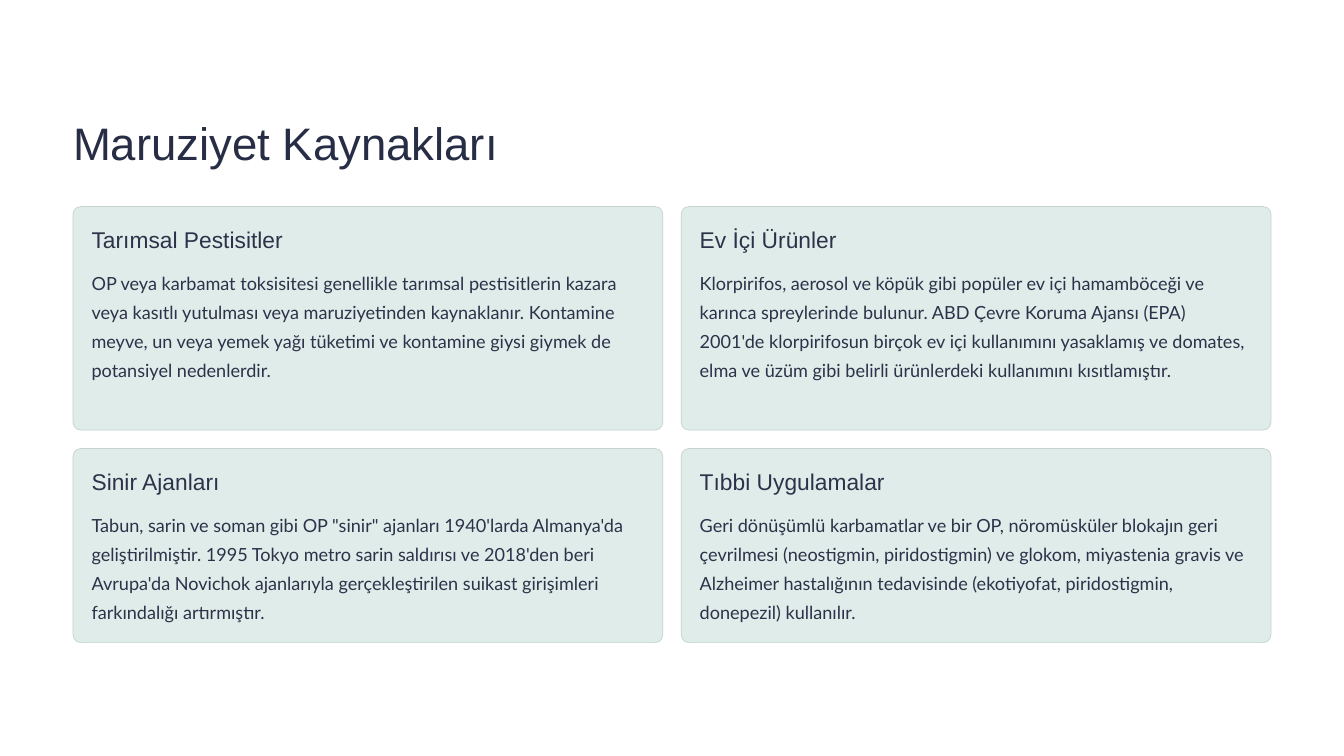
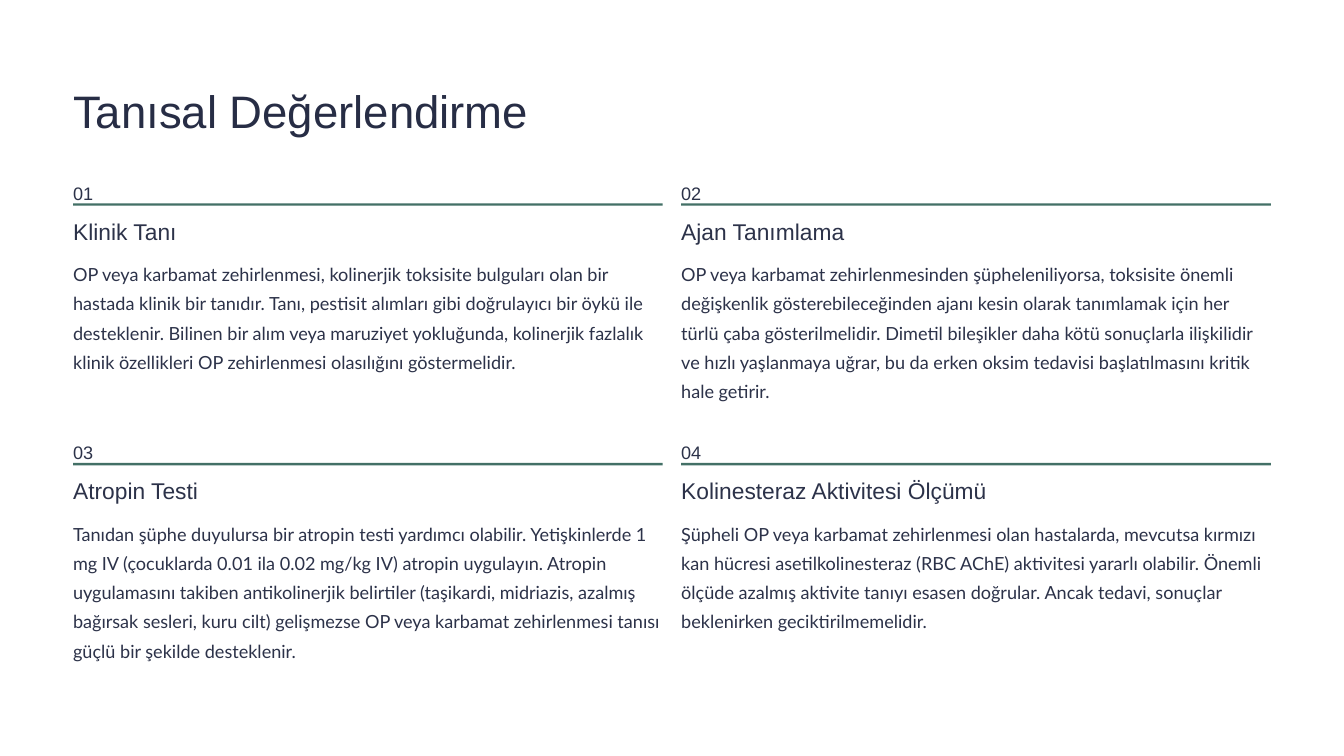
from dataclasses import dataclass

import pptx
import pptx.dml.color
import pptx.enum.shapes
import pptx.enum.text
import pptx.slide
import pptx.util
from pptx.dml.color import RGBColor
from pptx.util import Inches

TITLE_INK = RGBColor(0x27, 0x2D, 0x45)
INK = RGBColor(0x2C, 0x32, 0x49)
CARD_FILL = RGBColor(0xDF, 0xEC, 0xE9)
CARD_EDGE = RGBColor(0xC5, 0xD2, 0xCF)
RULE_GREEN = RGBColor(0x43, 0x70, 0x66)

# Two-column grid, in inches
LEFT = 0.87
COLUMN_WIDTH = 7.02
GAP = 0.22
PADDING = 0.22
CORNER_RADIUS = 0.09
HEADING_TO_BODY = 0.47
BODY_LINE = 0.3475


@dataclass(frozen=True)
class TextStyle:
    font: str
    size: float
    leading: float
    color: RGBColor


TITLE = TextStyle("Arial", 39, 48.5, TITLE_INK)
HEADING = TextStyle("Arial", 19.5, 24, INK)
NUMBER = TextStyle("Arial", 15.5, 25, INK)
BODY = TextStyle("Lato", 15.5, 25, INK)


@dataclass(frozen=True)
class Topic:
    heading: str
    body: str
    body_lines: int = 4
    heading_width: float = 2.71


SOURCES = [
    Topic("Tarımsal Pestisitler",
          "OP veya karbamat toksisitesi genellikle tarımsal pestisitlerin kazara veya "
          "kasıtlı yutulması veya maruziyetinden kaynaklanır. Kontamine meyve, un veya "
          "yemek yağı tüketimi ve kontamine giysi giymek de potansiyel nedenlerdir."),
    Topic("Ev İçi Ürünler",
          "Klorpirifos, aerosol ve köpük gibi popüler ev içi hamamböceği ve karınca "
          "spreylerinde bulunur. ABD Çevre Koruma Ajansı (EPA) 2001'de klorpirifosun "
          "birçok ev içi kullanımını yasaklamış ve domates, elma ve üzüm gibi belirli "
          "ürünlerdeki kullanımını kısıtlamıştır.", body_lines=5),
    Topic("Sinir Ajanları",
          "Tabun, sarin ve soman gibi OP \"sinir\" ajanları 1940'larda Almanya'da "
          "geliştirilmiştir. 1995 Tokyo metro sarin saldırısı ve 2018'den beri Avrupa'da "
          "Novichok ajanlarıyla gerçekleştirilen suikast girişimleri farkındalığı "
          "artırmıştır."),
    Topic("Tıbbi Uygulamalar",
          "Geri dönüşümlü karbamatlar ve bir OP, nöromüsküler blokajın geri çevrilmesi "
          "(neostigmin, piridostigmin) ve glokom, miyastenia gravis ve Alzheimer "
          "hastalığının tedavisinde (ekotiyofat, piridostigmin, donepezil) kullanılır."),
]

STEPS = [
    Topic("Klinik Tanı",
          "OP veya karbamat zehirlenmesi, kolinerjik toksisite bulguları olan bir hastada "
          "klinik bir tanıdır. Tanı, pestisit alımları gibi doğrulayıcı bir öykü ile "
          "desteklenir. Bilinen bir alım veya maruziyet yokluğunda, kolinerjik fazlalık "
          "klinik özellikleri OP zehirlenmesi olasılığını göstermelidir.", body_lines=5),
    Topic("Ajan Tanımlama",
          "OP veya karbamat zehirlenmesinden şüpheleniliyorsa, toksisite önemli "
          "değişkenlik gösterebileceğinden ajanı kesin olarak tanımlamak için her türlü "
          "çaba gösterilmelidir. Dimetil bileşikler daha kötü sonuçlarla ilişkilidir ve "
          "hızlı yaşlanmaya uğrar, bu da erken oksim tedavisi başlatılmasını kritik hale "
          "getirir.", body_lines=5),
    Topic("Atropin Testi",
          "Tanıdan şüphe duyulursa bir atropin testi yardımcı olabilir. Yetişkinlerde 1 "
          "mg IV (çocuklarda 0.01 ila 0.02 mg/kg IV) atropin uygulayın. Atropin "
          "uygulamasını takiben antikolinerjik belirtiler (taşikardi, midriazis, azalmış "
          "bağırsak sesleri, kuru cilt) gelişmezse OP veya karbamat zehirlenmesi tanısı "
          "güçlü bir şekilde desteklenir.", body_lines=5),
    Topic("Kolinesteraz Aktivitesi Ölçümü",
          "Şüpheli OP veya karbamat zehirlenmesi olan hastalarda, mevcutsa kırmızı kan "
          "hücresi asetilkolinesteraz (RBC AChE) aktivitesi yararlı olabilir. Önemli "
          "ölçüde azalmış aktivite tanıyı esasen doğrular. Ancak tedavi, sonuçlar "
          "beklenirken geciktirilmemelidir.", heading_width=3.64),
]


def write(frame: pptx.text.text.TextFrame, text: str, style: TextStyle,
          wrap: bool = False) -> None:
    """Fill a margin-free frame with one left-aligned paragraph."""
    frame.margin_left = frame.margin_top = frame.margin_right = frame.margin_bottom = 0
    frame.auto_size = pptx.enum.text.MSO_AUTO_SIZE.NONE
    frame.vertical_anchor = pptx.enum.text.MSO_ANCHOR.TOP
    frame.word_wrap = wrap
    frame.text = text
    paragraph = frame.paragraphs[0]
    paragraph.alignment = pptx.enum.text.PP_ALIGN.LEFT
    paragraph.line_spacing = pptx.util.Pt(style.leading)
    paragraph.font.name = style.font
    paragraph.font.size = pptx.util.Pt(style.size)
    paragraph.font.color.rgb = style.color


def add_text(slide: pptx.slide.Slide, text: str, style: TextStyle, left: float,
             top: float, width: float, height: float, wrap: bool = False) -> None:
    box = slide.shapes.add_textbox(Inches(left), Inches(top), Inches(width), Inches(height))
    write(box.text_frame, text, style, wrap)


def add_titled_slide(deck: pptx.presentation.Presentation, text: str,
                     top: float) -> pptx.slide.Slide:
    slide = deck.slides.add_slide(deck.slide_layouts.get_by_name("Title Only"))
    title = slide.shapes.title
    title.left, title.top = Inches(LEFT), Inches(top)
    title.width, title.height = Inches(5.43), Inches(0.68)
    write(title.text_frame, text, TITLE)
    return slide


def column_left(index: int) -> float:
    return LEFT + index % 2 * (COLUMN_WIDTH + GAP)


def add_topic(slide: pptx.slide.Slide, topic: Topic, left: float, top: float,
              width: float) -> None:
    add_text(slide, topic.heading, HEADING, left, top, topic.heading_width, 0.34)
    add_text(slide, topic.body, BODY, left, top + HEADING_TO_BODY, width,
             topic.body_lines * BODY_LINE, wrap=True)


def add_card(slide: pptx.slide.Slide, topic: Topic, left: float, top: float,
             height: float) -> None:
    card = slide.shapes.add_shape(pptx.enum.shapes.MSO_SHAPE.ROUNDED_RECTANGLE, Inches(left),
                                  Inches(top), Inches(COLUMN_WIDTH), Inches(height))
    card.adjustments[0] = CORNER_RADIUS / height
    card.shadow.inherit = False
    card.fill.solid()
    card.fill.fore_color.rgb = CARD_FILL
    card.line.color.rgb = CARD_EDGE
    card.line.width = pptx.util.Pt(0.6)
    add_topic(slide, topic, left + PADDING, top + PADDING, COLUMN_WIDTH - 2 * PADDING)


def add_step(slide: pptx.slide.Slide, number: int, topic: Topic, left: float,
             top: float) -> None:
    add_text(slide, f"{number:02}", NUMBER, left, top, 0.22, 0.27)
    rule = slide.shapes.add_shape(pptx.enum.shapes.MSO_SHAPE.RECTANGLE, Inches(left),
                                  Inches(top + 0.34), Inches(COLUMN_WIDTH), Inches(0.03))
    rule.shadow.inherit = False
    rule.fill.solid()
    rule.fill.fore_color.rgb = RULE_GREEN
    rule.line.fill.background()
    add_topic(slide, topic, left, top + 0.5, COLUMN_WIDTH)


def main() -> None:
    deck = pptx.Presentation()
    deck.slide_width, deck.slide_height = Inches(16), Inches(9)

    # Exposure sources: two rows of cards
    exposure = add_titled_slide(deck, "Maruziyet Kaynakları", 1.35)
    first_top, row_heights = 2.46, (2.66, 2.31)
    row_tops = (first_top, first_top + row_heights[0] + GAP)
    for index, topic in enumerate(SOURCES):
        row = index // 2
        add_card(exposure, topic, column_left(index), row_tops[row], row_heights[row])

    # Diagnostic evaluation: numbered steps under rules
    diagnosis = add_titled_slide(deck, "Tanısal Değerlendirme", 0.96)
    for index, topic in enumerate(STEPS):
        add_step(diagnosis, index + 1, topic, column_left(index), 2.08 + index // 2 * 3.09)

    deck.save("out.pptx")


if __name__ == "__main__":
    main()
